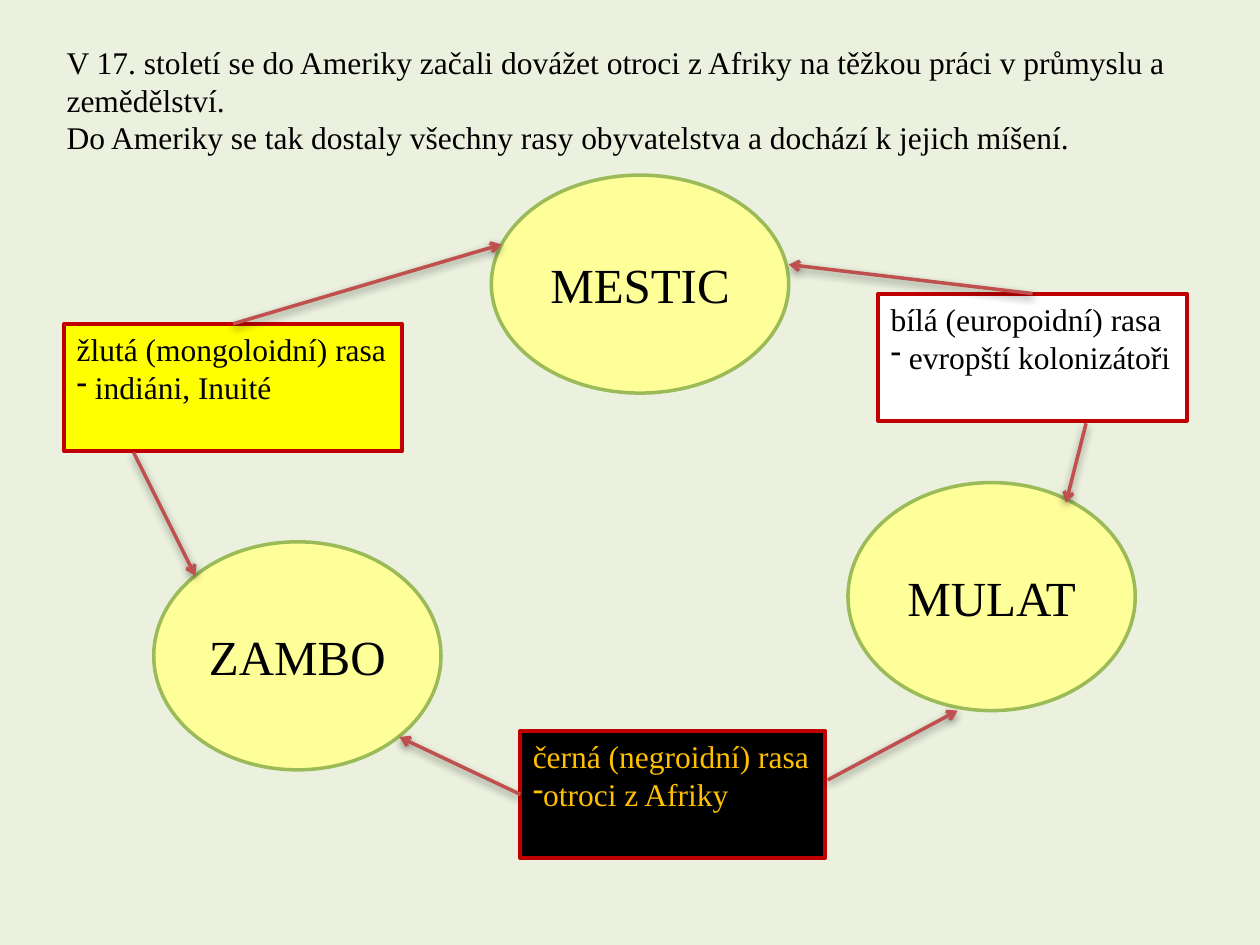
from lxml import etree
from pptx import Presentation
from pptx.dml.color import RGBColor
from pptx.enum.shapes import MSO_CONNECTOR, MSO_SHAPE
from pptx.enum.text import MSO_ANCHOR, PP_ALIGN
from pptx.oxml.ns import qn
from pptx.util import Inches, Pt

STRAIGHT = MSO_CONNECTOR.STRAIGHT
RECTANGLE, OVAL = MSO_SHAPE.RECTANGLE, MSO_SHAPE.OVAL
TOP, MIDDLE = MSO_ANCHOR.TOP, MSO_ANCHOR.MIDDLE
LEFT, CENTER = PP_ALIGN.LEFT, PP_ALIGN.CENTER
TOP_SIDE, LEFT_SIDE = 0, 1
FONT = "Times New Roman"
COLORS = {
    "background": "EBF1DE", "black": "000000", "white": "FFFFFF", "yellow": "FFFF00",
    "gold": "FFC000", "red": "C00000", "cream": "FFFF99", "green": "9BBB59", "arrow": "C0504D",
}

INTRO = [
    "V 17. století se do Ameriky začali dovážet otroci z Afriky na těžkou práci v průmyslu a zemědělství.",
    "Do Ameriky se tak dostaly všechny rasy obyvatelstva a dochází k jejich míšení.",
]
RACES = {
    "mongoloid": (["žlutá (mongoloidní) rasa", " indiáni, Inuité"], (0.51, 2.57, 2.68, 1.01), "yellow", "black", True),
    "europoid": (["bílá (europoidní) rasa", " evropští kolonizátoři"], (6.97, 2.33, 2.45, 1.01), "white", "black", True),
    "negroid": (["černá (negroidní) rasa", "otroci z Afriky"], (4.13, 5.8, 2.42, 1.01), "black", "gold", False),
}
MIXES = [
    ("ZAMBO", (1.22, 4.3, 2.28, 1.81)),
    ("MESTIC", (3.9, 1.39, 2.36, 1.73)),
    ("MULAT", (6.73, 3.83, 2.28, 1.81)),
]
ARROWS = [
    ((1.85, 2.57), (3.98, 1.94), ("mongoloid", TOP_SIDE)),
    ((8.19, 2.33), (6.26, 2.1), ("europoid", TOP_SIDE)),
    ((8.62, 3.36), (8.46, 3.99), None),
    ((6.57, 6.19), (7.6, 5.64), None),
    ((4.13, 6.3), (3.17, 5.85), ("negroid", LEFT_SIDE)),
    ((1.06, 3.59), (1.55, 4.57), None),
]


def rgb(name):
    return RGBColor.from_string(COLORS[name])


def write(shape, lines, size, color, align=LEFT, anchor=TOP, wrap=True):
    frame = shape.text_frame
    frame.text = "\n".join(lines)
    frame.word_wrap = wrap
    frame.vertical_anchor = anchor
    for para in frame.paragraphs:
        para.alignment = align
        para.font.name = FONT
        para.font.size = Pt(size)
        para.font.color.rgb = rgb(color)


def add_box(slide, kind, place, fill, line, width):
    box = slide.shapes.add_shape(kind, *map(Inches, place))
    box.shadow.inherit = False
    box.fill.solid()
    box.fill.fore_color.rgb = rgb(fill)
    box.line.color.rgb = rgb(line)
    box.line.width = Pt(width)
    return box


def add_dash(para):
    properties = para._p.get_or_add_pPr()
    properties.set("marL", "0")
    properties.set("indent", "0")
    etree.SubElement(properties, qn("a:buFontTx"))
    etree.SubElement(properties, qn("a:buChar"), char="-")
    default_font = properties.find(qn("a:defRPr"))
    if default_font is not None:
        properties.append(default_font)


def add_arrow(slide, start, end, joint, boxes):
    arrow = slide.shapes.add_connector(STRAIGHT, *map(Inches, start + end))
    if joint:
        race, side = joint
        arrow.begin_connect(boxes[race], side)
    arrow.line.color.rgb = rgb("arrow")
    arrow.line.width = Pt(2)
    etree.SubElement(arrow.line._get_or_add_ln(), qn("a:tailEnd"), type="arrow")
    effects = etree.SubElement(arrow._element.spPr, qn("a:effectLst"))
    shadow = etree.SubElement(effects, qn("a:outerShdw"), blurRad=str(Pt(5)), dist=str(Pt(2)),
                              dir="5400000", rotWithShape="0")
    tint = etree.SubElement(shadow, qn("a:srgbClr"), val=COLORS["black"])
    etree.SubElement(tint, qn("a:alpha"), val="43000")


def main():
    """Build the slide on the mixing of peoples in America."""
    deck = Presentation()
    deck.slide_width, deck.slide_height = Inches(10), Inches(7.5)
    slide = deck.slides.add_slide(deck.slide_layouts[6])
    slide.background.fill.solid()
    slide.background.fill.fore_color.rgb = rgb("background")

    intro = slide.shapes.add_textbox(*map(Inches, (0.43, 0.29, 8.98, 1.01)))
    write(intro, INTRO, 18, "black")

    boxes = {}
    for race, (lines, place, fill, color, wrap) in RACES.items():
        boxes[race] = add_box(slide, RECTANGLE, place, fill, "red", 2.25)
        write(boxes[race], lines, 18, color, wrap=wrap)
        add_dash(boxes[race].text_frame.paragraphs[1])

    for name, place in MIXES:
        oval = add_box(slide, OVAL, place, "cream", "green", 2)
        write(oval, [name], 28, "black", CENTER, MIDDLE)

    for start, end, joint in ARROWS:
        add_arrow(slide, start, end, joint, boxes)

    deck.save("out.pptx")


if __name__ == "__main__":
    main()
